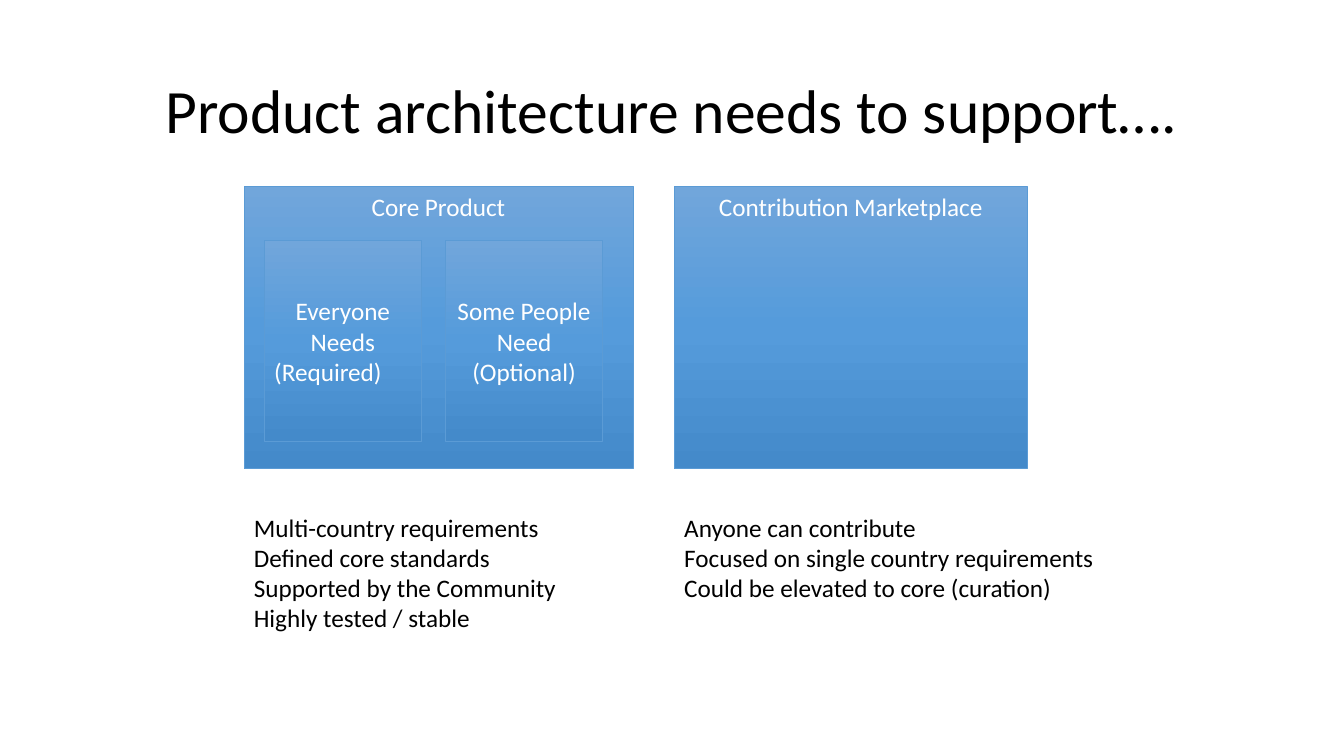
from copy import deepcopy

from pptx import Presentation
from pptx.dml.color import RGBColor
from pptx.enum.shapes import MSO_SHAPE
from pptx.enum.text import MSO_ANCHOR, MSO_AUTO_SIZE, PP_ALIGN
from pptx.oxml.ns import qn
from pptx.util import Pt

TITLE = "Product architecture needs to support…."
LEFT, CENTER = PP_ALIGN.LEFT, PP_ALIGN.CENTER

# Each area: heading, left, box width, notes width, notes height, notes
AREAS = [
    ("Core Product", 174.2, 278, 278, 116.6, [
        "Multi-country requirements",
        "Defined core standards",
        "Supported by the Community",
        "Highly tested / stable",
    ]),
    ("Contribution Marketplace", 481.7, 252, 360, 94.3, [
        "Anyone can contribute",
        "Focused on single country requirements",
        "Could be elevated to core (curation)",
    ]),
]
# Each need: paragraphs of (text, alignment)
NEEDS = [
    [("Everyone Needs", CENTER), ("(Required)", LEFT)],
    [("Some People Need (Optional)", CENTER)],
]

FONT = "Calibri"
BLACK, WHITE, OUTLINE = "000000", "FFFFFF", "5B9BD5"
GRADIENT = [(0, "71A6DB"), (0.5, "559BDB"), (1, "448ACA")]
AREA_TOP, AREA_HEIGHT, NOTES_TOP = 133.2, 201.6, 362.2
NEED_LEFT, NEED_TOP, NEED_STEP = 188.8, 171.8, 129.4
NEED_WIDTH, NEED_HEIGHT = 112.3, 143.5


def rgb(color):
    return RGBColor.from_string(color)


def write(frame, paragraphs, size, color, anchor=MSO_ANCHOR.TOP):
    frame.word_wrap = True
    frame.vertical_anchor = anchor
    for index, (text, alignment) in enumerate(paragraphs):
        paragraph = frame.add_paragraph() if index else frame.paragraphs[0]
        paragraph.alignment = alignment
        run = paragraph.add_run()
        run.text = text
        run.font.name = FONT
        run.font.size = Pt(size)
        run.font.color.rgb = rgb(color)


def add_box(slide, left, top, width, height, paragraphs, anchor):
    """Add a rectangle with the three-stop blue gradient, light at the top."""
    box = slide.shapes.add_shape(
        MSO_SHAPE.RECTANGLE, Pt(left), Pt(top), Pt(width), Pt(height))
    box.shadow.inherit = False
    box.line.color.rgb = rgb(OUTLINE)
    box.line.width = Pt(0.5)
    box.fill.gradient()
    box.fill.gradient_angle = 270
    stop_list = box._element.spPr.find(qn("a:gradFill")).find(qn("a:gsLst"))
    stop_list.append(deepcopy(stop_list[0]))
    for stop, (position, color) in zip(box.fill.gradient_stops, GRADIENT):
        stop.position = position
        stop.color.rgb = rgb(color)
    write(box.text_frame, paragraphs, 18, WHITE, anchor)


def main():
    deck = Presentation()
    deck.slide_width, deck.slide_height = Pt(960), Pt(540)
    slide = deck.slides.add_slide(deck.slide_layouts[5])

    title = slide.shapes.title
    title.left, title.top = Pt(66), Pt(28.8)
    title.width, title.height = Pt(828), Pt(104.4)
    title.text_frame.auto_size = MSO_AUTO_SIZE.NONE
    write(title.text_frame, [(TITLE, CENTER)], 44, BLACK, MSO_ANCHOR.MIDDLE)
    title.text_frame.paragraphs[0].line_spacing = 0.9

    for heading, left, width, notes_width, notes_height, notes in AREAS:
        add_box(slide, left, AREA_TOP, width, AREA_HEIGHT,
                [(heading, CENTER)], MSO_ANCHOR.TOP)
        notes_box = slide.shapes.add_textbox(
            Pt(left), Pt(NOTES_TOP), Pt(notes_width), Pt(notes_height))
        notes_box.text_frame.auto_size = MSO_AUTO_SIZE.SHAPE_TO_FIT_TEXT
        write(notes_box.text_frame, [(note, LEFT) for note in notes], 18, BLACK)

    for column, need in enumerate(NEEDS):
        add_box(slide, NEED_LEFT + column * NEED_STEP, NEED_TOP,
                NEED_WIDTH, NEED_HEIGHT, need, MSO_ANCHOR.MIDDLE)

    deck.save("out.pptx")


if __name__ == "__main__":
    main()
